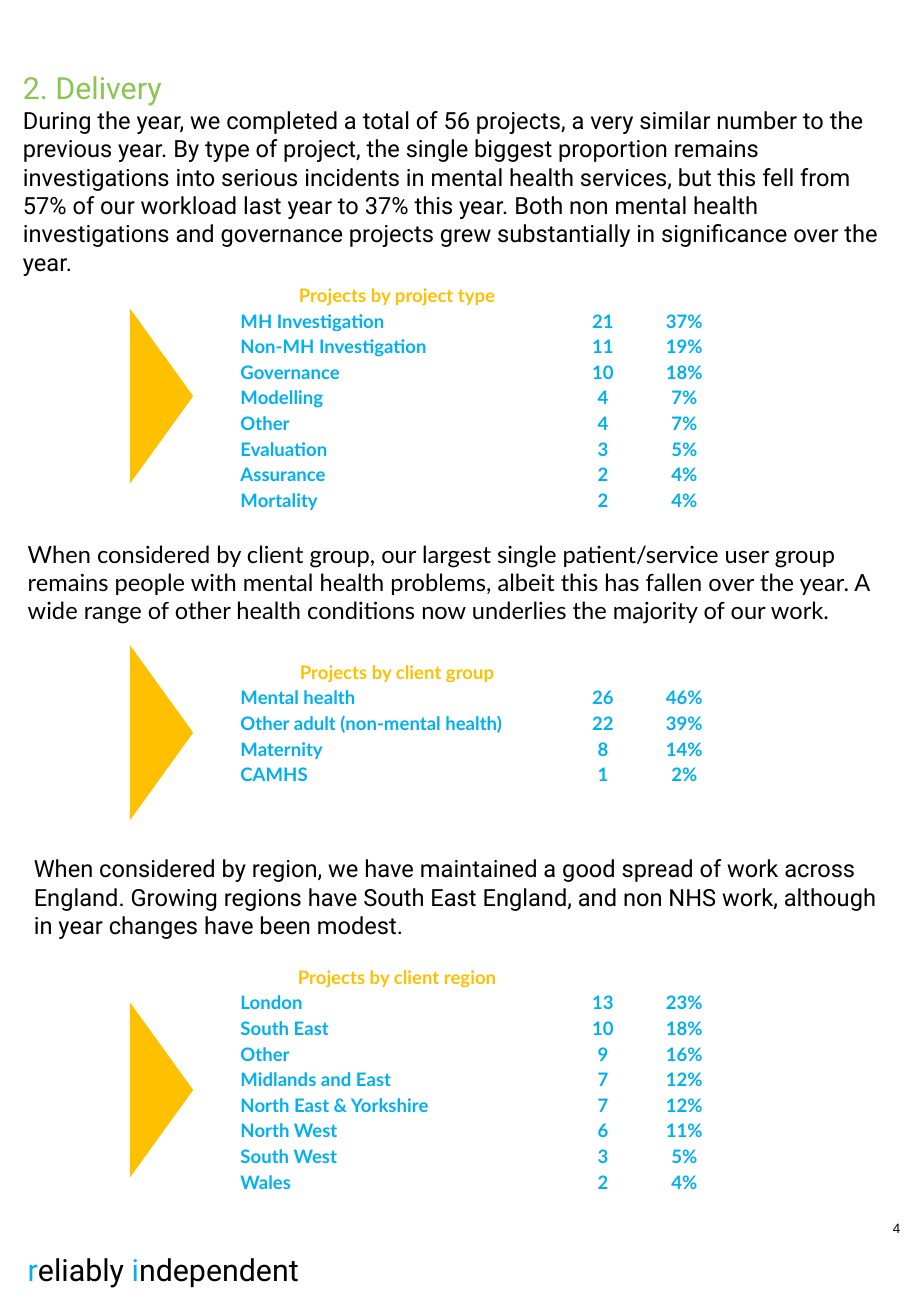
from lxml import etree
from pptx import Presentation
from pptx import util as u
from pptx.dml.color import RGBColor
from pptx.enum import shapes, text
from pptx.oxml.ns import qn

BLACK, GREEN, AMBER, BLUE = "000000", "89C64F", "FFC000", "00B0F0"
PAGE_WIDTH, PAGE_HEIGHT = 7.5, 10.83

INTRO = (
    "During the year, we completed a total of 56 projects, a very similar number to the previous year. "
    "By type of project, the single biggest proportion remains investigations into serious incidents in "
    "mental health services, but this fell from 57% of our workload last year to 37% this year. Both non "
    "mental health investigations and governance projects grew substantially in significance over the year."
)
CLIENT_GROUP = (
    "When considered by client group, our largest single patient/service user group remains people with "
    "mental health problems, albeit this has fallen over the year. A wide range of other health conditions "
    "now underlies the majority of our work."
)
REGION = (
    "When considered by region, we have maintained a good spread of work across England. Growing regions "
    "have South East England, and non NHS work, although in year changes have been modest."
)
MOTTO = [("r", BLUE), ("eliably ", BLACK), ("i", BLUE), ("ndependent", BLACK)]

# heading, table top, marker top, rows
BREAKDOWNS = [
    ("Projects by project type", 2.31, 3.0, [
        ("MH Investigation", 21, 37), ("Non-MH Investigation", 11, 19), ("Governance", 10, 18),
        ("Modelling", 4, 7), ("Other", 4, 7), ("Evaluation", 3, 5), ("Assurance", 2, 4),
        ("Mortality", 2, 4)]),
    ("Projects by client group", 5.41, 5.77, [
        ("Mental health", 26, 46), ("Other adult (non-mental health)", 22, 39),
        ("Maternity", 8, 14), ("CAMHS", 1, 2)]),
    ("Projects by client region", 7.92, 8.71, [
        ("London", 13, 23), ("South East", 10, 18), ("Other", 9, 16), ("Midlands and East", 7, 12),
        ("North East & Yorkshire", 7, 12), ("North West", 6, 11), ("South West", 3, 5),
        ("Wales", 2, 4)]),
]
TABLE_LEFT, COLUMNS, ROW_HEIGHT = 1.91, (2.72, 0.67, 0.67), 0.2
MARKER_LEFT, MARKER_WIDTH, MARKER_HEIGHT = 0.61, 1.44, 0.52

LEFT, CENTER, RIGHT = text.PP_ALIGN.LEFT, text.PP_ALIGN.CENTER, text.PP_ALIGN.RIGHT


def colour(value):
    return RGBColor.from_string(value)


def inches(*lengths):
    return [u.Inches(length) for length in lengths]


def write(paragraph, runs, size=14, font="Roboto", bold=False, align=LEFT):
    """Fill a paragraph with (text, colour) runs that share one format."""
    paragraph.alignment = align
    for words, ink in runs:
        run = paragraph.add_run()
        run.text = words
        run.font.size, run.font.name, run.font.bold = u.Pt(size), font, bold
        run.font.color.rgb = colour(ink)
    if not runs:
        etree.SubElement(paragraph._p, qn("a:endParaRPr"), sz=str(size * 100))


def add_box(slide, place, *paragraphs, anchor=text.MSO_ANCHOR.TOP):
    """Add a text box; each paragraph is a (runs, format) pair."""
    frame = slide.shapes.add_textbox(*inches(*place)).text_frame
    frame.word_wrap = True
    frame.vertical_anchor = anchor
    for index, (runs, style) in enumerate(paragraphs):
        write(frame.add_paragraph() if index else frame.paragraphs[0], runs, **style)


def add_marker(slide, top):
    marker = slide.shapes.add_shape(
        shapes.MSO_SHAPE.ISOSCELES_TRIANGLE,
        *inches(MARKER_LEFT, top, MARKER_WIDTH, MARKER_HEIGHT))
    marker.rotation = 90
    marker.shadow.inherit = False
    marker.fill.solid()
    marker.fill.fore_color.rgb = colour(AMBER)
    marker.line.fill.background()


def add_breakdown(slide, heading, top, rows):
    lines = [(heading, "", "")] + [(name, str(count), f"{share}%") for name, count, share in rows]
    table = slide.shapes.add_table(
        len(lines), len(COLUMNS),
        *inches(TABLE_LEFT, top, sum(COLUMNS), ROW_HEIGHT * len(lines))).table
    table.first_row = table.horz_banding = False
    for column, width in zip(table.columns, COLUMNS):
        column.width = u.Inches(width)
    for r, line in enumerate(lines):
        for c, words in enumerate(line):
            cell = table.cell(r, c)
            cell.fill.background()
            cell.vertical_anchor = text.MSO_ANCHOR.BOTTOM
            cell.margin_left = cell.margin_right = u.Inches(0.07)
            cell.margin_top = cell.margin_bottom = 0
            paragraph = cell.text_frame.paragraphs[0]
            paragraph.line_spacing = 1.15
            paragraph.space_after = u.Pt(8)
            write(paragraph, [(words, BLUE if r else AMBER)] if words else [], size=11,
                  font="Lato", bold=True, align=LEFT if r and not c else CENTER)


def main():
    deck = Presentation()
    deck.slide_width, deck.slide_height = inches(PAGE_WIDTH, PAGE_HEIGHT)
    slide = deck.slides.add_slide(deck.slide_layouts[6])

    add_box(slide, (6.92, 9.99, 0.59, 0.28),
            ([("4", BLACK)], dict(size=8, font="Arial", align=RIGHT)))
    add_box(slide, (0.09, 0.51, 7.32, 1.82),
            ([("2. Delivery", GREEN)], dict(size=18)), ([(INTRO, BLACK)], {}),
            anchor=text.MSO_ANCHOR.MIDDLE)
    add_box(slide, (0.13, 4.39, 7.32, 0.81), ([(CLIENT_GROUP, BLACK)], dict(font="Lato")))
    add_box(slide, (0.18, 6.98, 7.23, 0.81), ([(REGION, BLACK)], {}))
    for heading, table_top, marker_top, rows in BREAKDOWNS:
        add_marker(slide, marker_top)
        add_breakdown(slide, heading, table_top, rows)
    add_box(slide, (0.13, 10.25, 2.57, 0.4), (MOTTO, dict(size=18)))

    deck.save("out.pptx")


if __name__ == "__main__":
    main()
